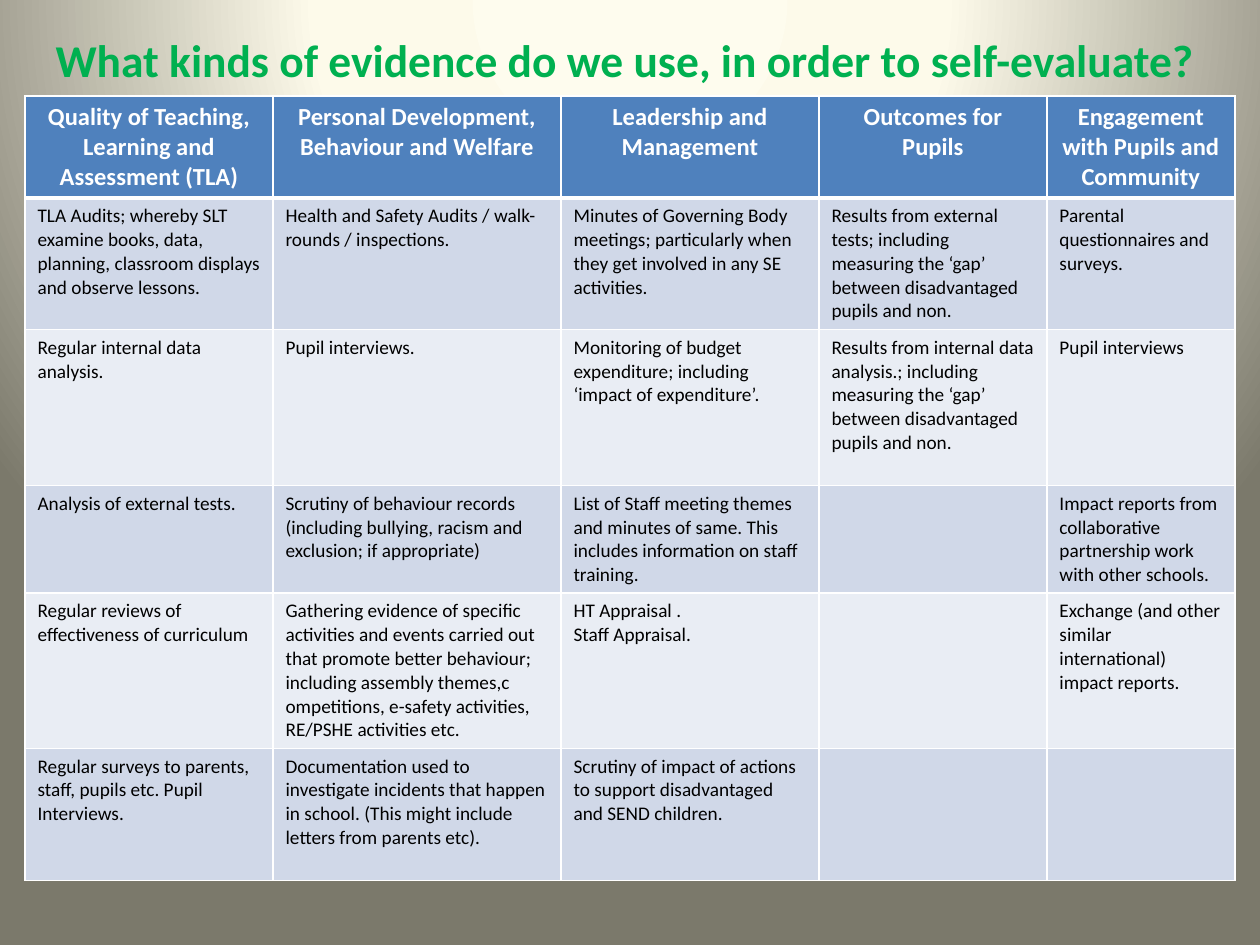
from dataclasses import dataclass

from lxml import etree
from pptx import Presentation
from pptx import util as u
from pptx.dml.color import RGBColor
from pptx.enum import text
from pptx.oxml import parse_xml
from pptx.oxml.ns import nsdecls, qn

PX = u.Inches(1) / 126


@dataclass(frozen=True)
class Theme:
    font: str = "Calibri"
    title_size: int = 26
    header_size: int = 14
    body_size: int = 11
    title: str = "00B050"
    header_text: str = "FFFFFF"
    body_text: str = "000000"
    header_fill: str = "4F81BD"
    bands: tuple = ("D0D8E8", "E9EDF4")
    border: str = "FFFFFF"
    thin: int = 1
    thick: int = 3
    backdrop: tuple = ((0, "FEFCEE"), (40, "FDFAEA"), (100, "7B796B"))


THEME = Theme()
TITLE = "What kinds of evidence do we use, in order to self-evaluate?"
COLUMN_WIDTHS = (248, 288, 258, 228, 188)
ROW_HEIGHTS = (101, 131, 156, 107, 155, 132)
EVIDENCE = (
    ("Quality of Teaching, Learning and Assessment (TLA)",
     "Personal Development, Behaviour and Welfare",
     "Leadership and Management",
     "Outcomes for Pupils",
     "Engagement with Pupils and Community"),
    ("TLA Audits; whereby SLT examine books, data, planning, classroom displays and observe lessons.",
     "Health and Safety Audits / walk-rounds / inspections.",
     "Minutes of Governing Body meetings; particularly when they get involved in any SE activities.",
     "Results from external tests; including measuring the ‘gap’ between disadvantaged pupils and non.",
     "Parental questionnaires and surveys."),
    ("Regular internal data analysis.",
     "Pupil interviews.",
     "Monitoring of budget expenditure; including ‘impact of expenditure’.",
     "Results from internal data analysis.; including measuring the ‘gap’ between disadvantaged pupils and non.",
     "Pupil interviews"),
    ("Analysis of external tests.",
     "Scrutiny of behaviour records (including bullying, racism and exclusion; if appropriate)",
     "List of Staff meeting themes and minutes of same. This includes information on staff training.",
     "",
     "Impact reports from collaborative partnership work with other schools."),
    ("Regular reviews of effectiveness of curriculum",
     "Gathering evidence of specific activities and events carried out that promote better behaviour; "
     "including assembly themes,c ompetitions, e-safety activities, RE/PSHE activities etc.",
     "HT Appraisal .\nStaff Appraisal.",
     "",
     "Exchange (and other similar international) impact reports."),
    ("Regular surveys to parents, staff, pupils etc. Pupil Interviews.",
     "Documentation used to investigate incidents that happen in school. "
     "(This might include letters from parents etc).",
     "Scrutiny of impact of actions to support disadvantaged and SEND children.",
     "",
     ""),
)


def px(length):
    return u.Emu(round(length * PX))


def style_text(frame, size, color, bold, align):
    for para in frame.paragraphs:
        para.alignment = align
        para.font.name = THEME.font
        para.font.size = u.Pt(size)
        para.font.bold = bold
        para.font.color.rgb = RGBColor.from_string(color)


def paint_background(page):
    # Radial gradient centred above the page
    stops = "".join(
        f'<a:gs pos="{place * 1000}"><a:srgbClr val="{color}"/></a:gs>'
        for place, color in THEME.backdrop)
    background = parse_xml(
        f'<p:bg {nsdecls("p", "a")}><p:bgPr><a:gradFill rotWithShape="1">'
        f'<a:gsLst>{stops}</a:gsLst><a:path path="circle">'
        '<a:fillToRect l="50000" t="-80000" r="50000" b="180000"/></a:path>'
        '</a:gradFill><a:effectLst/></p:bgPr></p:bg>')
    page.element.cSld.insert(0, background)


def add_title(page):
    title = page.shapes.title
    title.left, title.top, title.width, title.height = map(px, (15, 16, 1221, 87))
    title.text_frame.text = TITLE
    title.text_frame.vertical_anchor = text.MSO_ANCHOR.MIDDLE
    style_text(title.text_frame, THEME.title_size, THEME.title, True, text.PP_ALIGN.CENTER)


def add_borders(cell, widths):
    properties = cell._tc.get_or_add_tcPr()
    for side, width in widths.items():
        line = etree.SubElement(properties, qn(f"a:ln{side}"), w=str(u.Pt(width)))
        fill = etree.SubElement(line, qn("a:solidFill"))
        etree.SubElement(fill, qn("a:srgbClr"), val=THEME.border)


def fill_cell(cell, words, row):
    header = row == 0
    cell.text = words
    if header:
        style_text(cell.text_frame, THEME.header_size, THEME.header_text, True, text.PP_ALIGN.CENTER)
    else:
        style_text(cell.text_frame, THEME.body_size, THEME.body_text, False, text.PP_ALIGN.LEFT)
    # The rule under the header is shared by the first two rows
    add_borders(cell, {
        "L": THEME.thin,
        "R": THEME.thin,
        "T": THEME.thick if row == 1 else THEME.thin,
        "B": THEME.thick if header else THEME.thin,
    })
    cell.fill.solid()
    color = THEME.header_fill if header else THEME.bands[(row - 1) % 2]
    cell.fill.fore_color.rgb = RGBColor.from_string(color)


def add_evidence_table(page):
    frame = page.shapes.add_table(
        len(ROW_HEIGHTS), len(COLUMN_WIDTHS), px(25), px(96),
        px(sum(COLUMN_WIDTHS)), px(sum(ROW_HEIGHTS)))
    table = frame.table
    for column, width in zip(table.columns, COLUMN_WIDTHS):
        column.width = px(width)
    for row, height in zip(table.rows, ROW_HEIGHTS):
        row.height = px(height)
    for row, entries in enumerate(EVIDENCE):
        for column, words in enumerate(entries):
            fill_cell(table.cell(row, column), words, row)


def main():
    deck = Presentation()
    deck.slide_width, deck.slide_height = u.Inches(10), u.Inches(7.5)
    page = deck.slides.add_slide(deck.slide_layouts[5])  # title only
    paint_background(page)
    add_title(page)
    add_evidence_table(page)
    deck.save("out.pptx")


if __name__ == "__main__":
    main()
